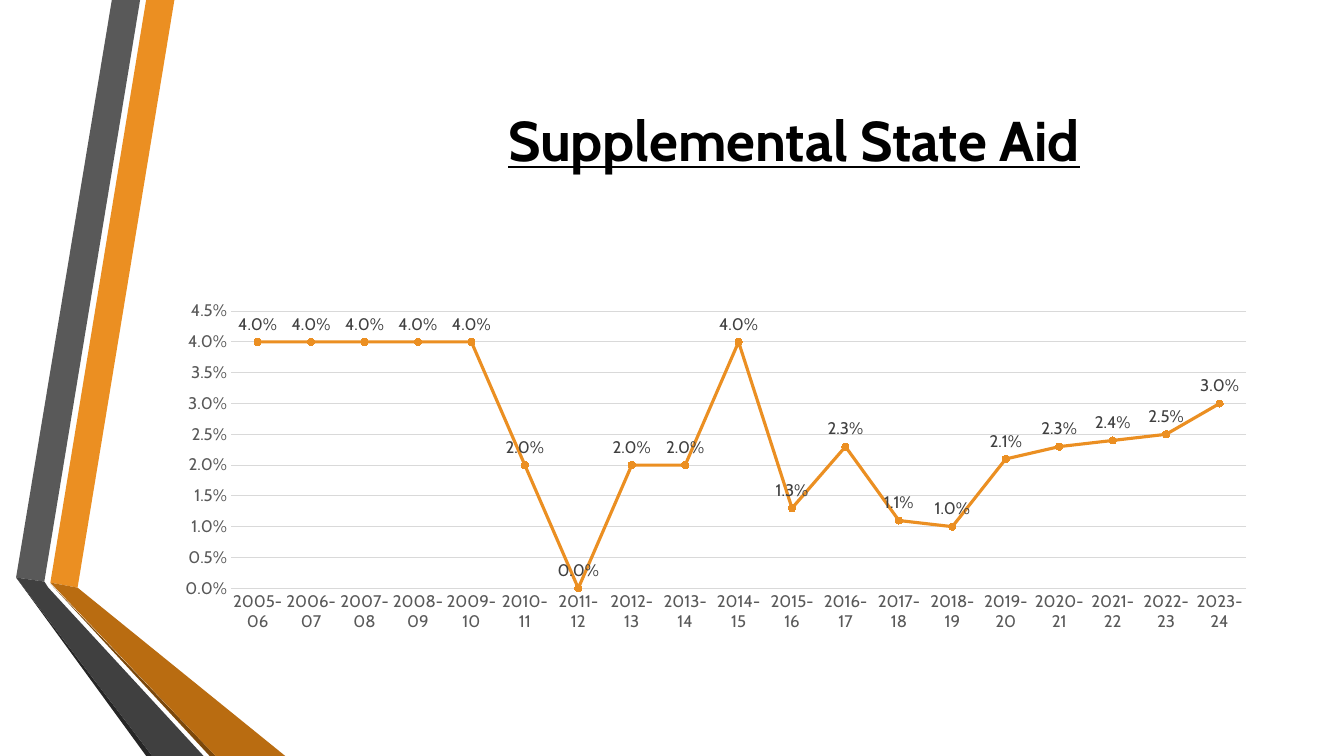
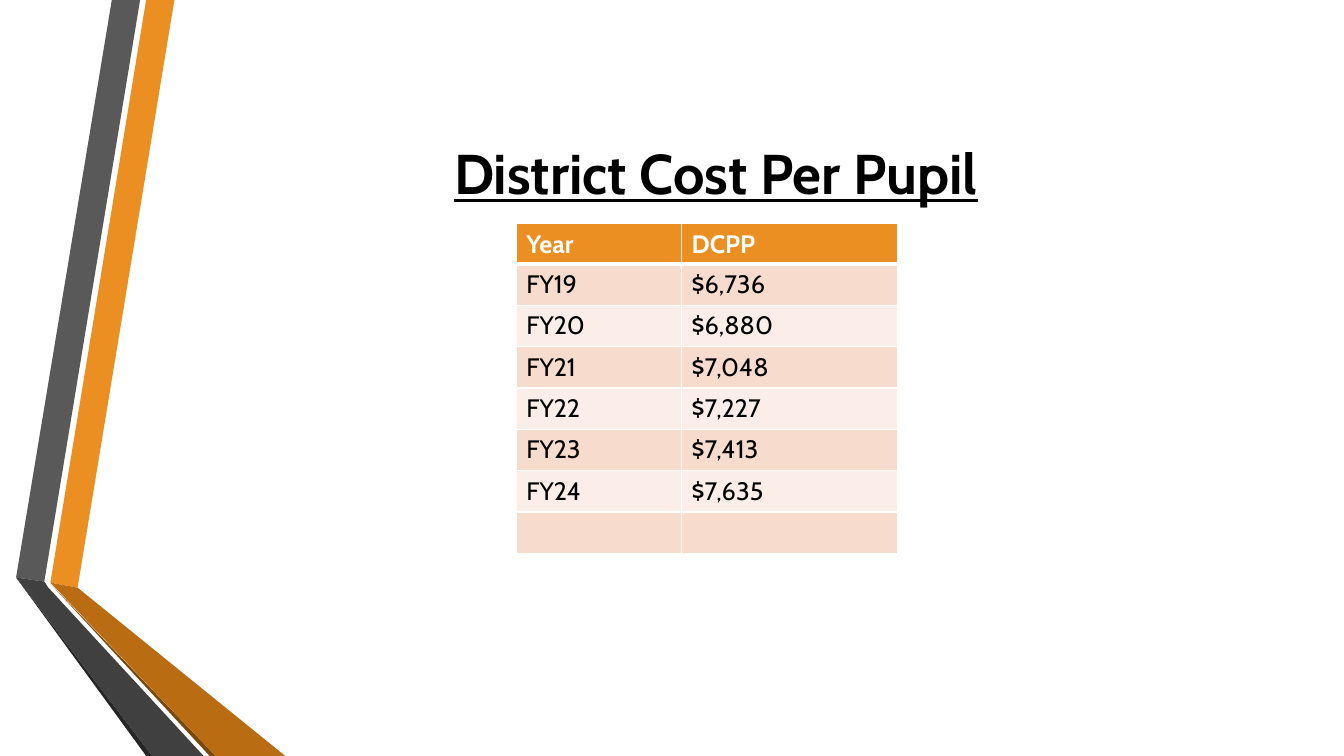
"""Build two slides on school aid: a line chart and a cost table."""
import dataclasses
import typing

import lxml.etree
import pptx
import pptx.chart.data
import pptx.dml.color
import pptx.dml.fill
import pptx.enum.chart
import pptx.enum.text
import pptx.oxml.ns
import pptx.slide
import pptx.table
import pptx.text.text
import pptx.util

Inches = pptx.util.Inches
Pt = pptx.util.Pt
Point = tuple[float, float]
Box = tuple[float, float, float, float]


@dataclasses.dataclass(frozen=True)
class Theme:
    face: str = "Cabin"
    head: int = 40
    cell: int = 18
    label: int = 12
    black: str = "000000"
    white: str = "FFFFFF"
    gold: str = "EB8F22"
    slate: str = "595959"
    dark: str = "404040"
    grid: str = "D9D9D9"
    odd: str = "F7DBCD"
    even: str = "FBEEE8"


@dataclasses.dataclass(frozen=True)
class Band:
    color: str
    points: tuple[Point, ...]


THEME = Theme()
BANDS = (
    Band(THEME.gold, ((0.5, 5.78), (0.77, 5.83), (1.73, 0), (1.45, 0))),
    Band(THEME.slate, ((1.39, 0), (1.11, 0), (0.16, 5.73), (0.44, 5.77))),
    Band("262626", ((0.16, 5.73), (1.45, 7.5), (1.51, 7.5))),
    Band("7B480B", ((0.5, 5.79), (2.08, 7.5), (2.14, 7.5))),
    Band("B96C11", ((0.5, 5.78), (2.14, 7.5), (2.83, 7.5), (0.77, 5.83))),
    Band(THEME.dark, ((2.02, 7.5), (0.48, 5.83), (0.44, 5.77),
                      (0.16, 5.73), (1.51, 7.5))),
)
FIRST = 2005
RATES = (4, 4, 4, 4, 4, 2, 0, 2, 2, 4, 1.3, 2.3, 1.1, 1, 2.1, 2.3, 2.4, 2.5, 3)
COSTS = (
    ("Year", "DCPP"),
    ("FY19", "$6,736"),
    ("FY20", "$6,880"),
    ("FY21", "$7,048"),
    ("FY22", "$7,227"),
    ("FY23", "$7,413"),
    ("FY24", "$7,635"),
    ("", ""),
)


def apply(item: typing.Any, form: dict[str, typing.Any]) -> None:
    for name, value in form.items():
        setattr(item, name, value)


def paint(fill: pptx.dml.fill.FillFormat, color: str) -> None:
    fill.solid()
    fill.fore_color.rgb = pptx.dml.color.RGBColor.from_string(color)


def style(font: pptx.text.text.Font, size: int, color: str, **more: bool) -> None:
    apply(font, {"name": THEME.face, "size": Pt(size), **more})
    font.color.rgb = pptx.dml.color.RGBColor.from_string(color)


def place(box: Box) -> list[pptx.util.Length]:
    return [Inches(side) for side in box]


def draw_band(slide: pptx.slide.Slide, band: Band) -> None:
    start, *rest = [(Inches(x), Inches(y)) for x, y in band.points]
    pen = slide.shapes.build_freeform(*start)
    pen.add_line_segments(rest, close=True)
    shape = pen.convert_to_shape()
    shape.shadow.inherit = False
    paint(shape.fill, band.color)
    shape.line.fill.background()


def add_slide(deck: typing.Any, title: str, box: Box) -> pptx.slide.Slide:
    slide = deck.slides.add_slide(deck.slide_layouts[6])
    for band in BANDS:
        draw_band(slide, band)
    frame = slide.shapes.add_textbox(*place(box)).text_frame
    apply(frame, {"word_wrap": True,
                  "vertical_anchor": pptx.enum.text.MSO_ANCHOR.MIDDLE})
    line = frame.paragraphs[0]
    line.alignment = pptx.enum.text.PP_ALIGN.CENTER
    run = line.add_run()
    run.text = title
    style(run.font, THEME.head, THEME.black, bold=True, underline=True)
    return slide


def add_chart(slide: pptx.slide.Slide, box: Box) -> None:
    kinds = pptx.enum.chart
    data = pptx.chart.data.CategoryChartData(number_format="0.0%")
    data.categories = [f"{year}-{(year + 1) % 100:02}"
                       for year in range(FIRST, FIRST + len(RATES))]
    data.add_series("Series 1", [round(rate / 100, 3) for rate in RATES])
    chart = slide.shapes.add_chart(
        kinds.XL_CHART_TYPE.LINE_MARKERS, *place(box), data).chart
    apply(chart, {"has_title": False, "has_legend": False})
    style(chart.font, THEME.label, THEME.black)
    for axis in (chart.category_axis, chart.value_axis):
        axis.major_tick_mark = kinds.XL_TICK_MARK.NONE
        style(axis.tick_labels.font, THEME.label, THEME.slate)
    scale = chart.value_axis
    apply(scale, {"minimum_scale": 0, "maximum_scale": 0.045,
                  "major_unit": 0.005, "has_major_gridlines": True})
    apply(scale.tick_labels, {"number_format": "0.0%",
                              "number_format_is_linked": False})
    scale.format.line.fill.background()
    for rule in (chart.category_axis.format.line,
                 scale.major_gridlines.format.line):
        rule.width = Pt(0.75)
        paint(rule.fill, THEME.grid)

    plot = chart.plots[0]
    plot.vary_by_categories = False
    trend = plot.series[0]
    trend.smooth = False
    trend.format.line.width = Pt(2.25)
    apply(trend.marker, {"style": kinds.XL_MARKER_STYLE.CIRCLE, "size": 5})
    for fill in (trend.format.line.fill, trend.marker.format.fill,
                 trend.marker.format.line.fill):
        paint(fill, THEME.gold)
    labels = trend.data_labels
    apply(labels, {"show_value": True, "number_format": "0.0%",
                   "number_format_is_linked": False,
                   "position": kinds.XL_LABEL_POSITION.ABOVE})
    style(labels.font, THEME.label, THEME.dark)


def add_edge(cell: pptx.table._Cell, side: str, width: float) -> None:
    name = pptx.oxml.ns.qn
    make = lxml.etree.SubElement
    props = cell._tc.get_or_add_tcPr()
    edge = make(props, name(f"a:ln{side}"), w=str(Pt(width)))
    fill = make(edge, name("a:solidFill"))
    make(fill, name("a:srgbClr"), val=THEME.white)


def add_table(slide: pptx.slide.Slide, box: Box, wide: tuple[float, ...]) -> None:
    table = slide.shapes.add_table(len(COSTS), len(wide), *place(box)).table
    apply(table, {"first_row": False, "horz_banding": False})
    for column, width in zip(table.columns, wide):
        column.width = Inches(width)
    for top, texts in enumerate(COSTS):
        head = top == 0
        table.rows[top].height = Inches(0.4 if head else 0.41)
        shade = THEME.gold if head else (THEME.even, THEME.odd)[top % 2]
        edges = {"L": 1, "R": 1, "T": 3 if top == 1 else 1, "B": 3 if head else 1}
        for cell, text in zip(table.rows[top].cells, texts):
            for side, width in edges.items():
                add_edge(cell, side, width)
            paint(cell.fill, shade)
            cell.text = text
            style(cell.text_frame.paragraphs[0].font, THEME.cell,
                  THEME.white if head else THEME.black, bold=head)
            for run in cell.text_frame.paragraphs[0].runs:
                style(run.font, THEME.cell,
                      THEME.white if head else THEME.black, bold=head)


def main() -> None:
    deck = pptx.Presentation()
    apply(deck, {"slide_width": Inches(13.33), "slide_height": Inches(7.5)})
    aid = add_slide(deck, "Supplemental State Aid", (3, 0.68, 9.75, 1.4))
    add_chart(aid, (1.62, 2.92, 10.96, 3.42))
    cost = add_slide(deck, "District Cost Per Pupil", (1.62, 0.75, 10.96, 1.92))
    add_table(cost, (5.12, 2.22, 3.78, 3.27), (1.64, 2.14))
    deck.save("out.pptx")


if __name__ == "__main__":
    main()
